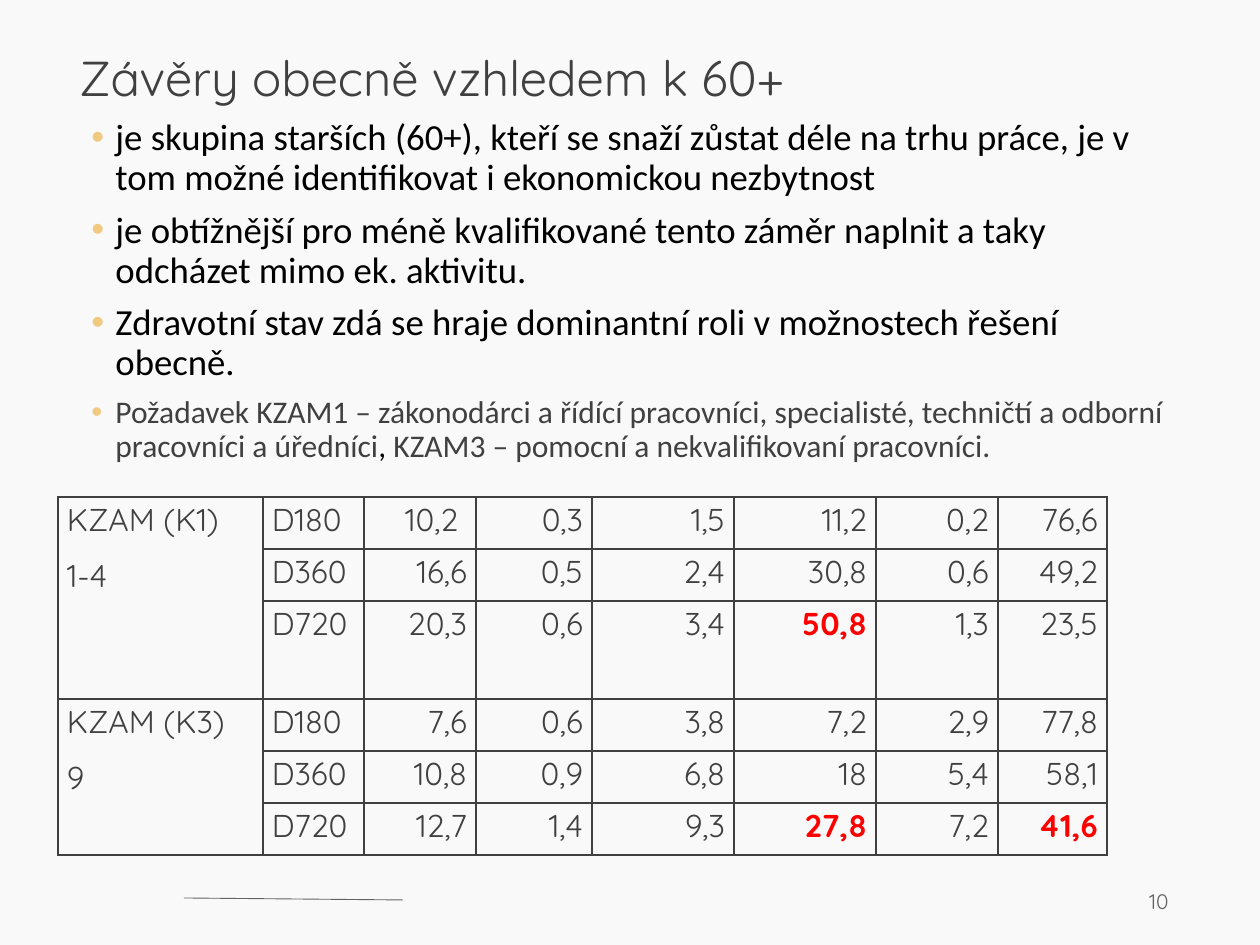
from lxml import etree
from pptx import Presentation
from pptx import util as u
from pptx.dml.color import RGBColor
from pptx.enum import shapes, text
from pptx.oxml.ns import qn

COLORS = {"background": "F9F9F9", "text": "404040", "body": "000000",
          "bullet": "F0CA81", "muted": "636363", "highlight": "FF0000"}
ALIGN = text.PP_ALIGN


def px(pixels):
    return u.Emu(round(pixels * 914400 / 126))


def add_run(paragraph, words, size, color, font="Quicksand", bold=False):
    run = paragraph.add_run()
    run.text = words
    run.font.name = font
    run.font.size = u.Pt(size)
    run.font.bold = bold
    run.font.color.rgb = RGBColor.from_string(COLORS[color])


presentation = Presentation()
presentation.slide_width, presentation.slide_height = px(1260), px(945)
slide = presentation.slides.add_slide(presentation.slide_layouts[5])
slide.background.fill.solid()
slide.background.fill.fore_color.rgb = RGBColor.from_string(COLORS["background"])

# Footer line
line = slide.shapes.add_connector(shapes.MSO_CONNECTOR.STRAIGHT,
                                  px(184), px(898), px(403), px(900))
line.line.color.rgb = RGBColor.from_string(COLORS["muted"])
line.line.width = u.Pt(0.5)
etree.SubElement(line._element.spPr, qn("a:effectLst"))

# Slide number
number = slide.shapes.add_textbox(px(897), px(876), px(284), px(50)).text_frame
number.word_wrap = True
number.vertical_anchor = text.MSO_ANCHOR.MIDDLE
number.paragraphs[0].alignment = ALIGN.RIGHT
add_run(number.paragraphs[0], "10", 12, "muted")

# Title
title = slide.shapes.title
title.left, title.top, title.width, title.height = px(79), px(59), px(1101), px(50)
frame = title.text_frame
frame.auto_size = text.MSO_AUTO_SIZE.NONE
frame.word_wrap = True
frame.vertical_anchor = text.MSO_ANCHOR.TOP
frame.margin_left = frame.margin_right = frame.margin_top = frame.margin_bottom = 0
frame.paragraphs[0].alignment = ALIGN.LEFT
frame.paragraphs[0].line_spacing = 0.8
add_run(frame.paragraphs[0], "Závěry obecně vzhledem k 60+", 28, "text")

# Bulleted conclusions: each is a size and its runs
conclusions = [
    (21, [("je skupina starších (60+), kteří se snaží zůstat déle na trhu práce, "
           "je v tom možné identifikovat i ekonomickou nezbytnost", "body")]),
    (21, [("je obtížnější pro méně kvalifikované tento záměr naplnit a "
           "taky odcházet mimo ek. aktivitu.", "body")]),
    (21, [("Zdravotní stav zdá se hraje dominantní roli v možnostech řešení obecně.",
           "body")]),
    (18, [("Požadavek KZAM1 – zákonodárci a řídící pracovníci, specialisté, "
           "techničtí a odborní pracovníci a úředníci", "text"),
          (", ", "body"),
          ("KZAM3 – pomocní a nekvalifikovaní pracovníci.", "text")]),
]
body = slide.shapes.add_textbox(px(79), px(113), px(1101), px(670)).text_frame
body.word_wrap = True
for index, (size, runs) in enumerate(conclusions):
    paragraph = body.add_paragraph() if index else body.paragraphs[0]
    properties = paragraph._p.get_or_add_pPr()
    properties.set("marL", str(px(24)))
    properties.set("indent", str(-px(24)))
    bullet_color = etree.SubElement(properties, qn("a:buClr"))
    etree.SubElement(bullet_color, qn("a:srgbClr"), val=COLORS["bullet"])
    etree.SubElement(properties, qn("a:buFont"), typeface="Arial")
    etree.SubElement(properties, qn("a:buChar"), char="•")
    paragraph.line_spacing = 0.9
    if index:
        paragraph.space_before = u.Pt(7.5)
    for words, color in runs:
        add_run(paragraph, words, size, color, "Calibri")

# Table: two groups of three durations
column_widths = [205, 101, 112, 116, 142, 142, 122, 109]
row_heights = [52, 52, 98, 52, 52, 52]
rows = [
    ["KZAM (K1)\n1-4", "D180", "10,2 ", "0,3", "1,5", "11,2", "0,2", "76,6"],
    ["", "D360", "16,6", "0,5", "2,4", "30,8", "0,6", "49,2"],
    ["", "D720", "20,3", "0,6", "3,4", "50,8", "1,3", "23,5"],
    ["KZAM (K3)\n9", "D180", "7,6", "0,6", "3,8", "7,2", "2,9", "77,8"],
    ["", "D360", "10,8", "0,9", "6,8", "18", "5,4", "58,1"],
    ["", "D720", "12,7", "1,4", "9,3", "27,8", "7,2", "41,6"],
]
highlights = {(2, 5), (5, 5), (5, 7)}
table = slide.shapes.add_table(len(rows), len(column_widths), px(58), px(497),
                               px(sum(column_widths)), px(sum(row_heights))).table
table.first_row = table.horz_banding = False
for column, width in zip(table.columns, column_widths):
    column.width = px(width)
for row, height in zip(table.rows, row_heights):
    row.height = px(height)
for first in (0, 3):
    table.cell(first, 0).merge(table.cell(first + 2, 0))

for r, values in enumerate(rows):
    for c, value in enumerate(values):
        cell = table.cell(r, c)
        cell.margin_left = cell.margin_right = px(9)
        cell.margin_top = cell.margin_bottom = 0
        # Borders come before the fill in the cell properties
        properties = cell._tc.get_or_add_tcPr()
        for side in ("lnL", "lnR", "lnT", "lnB"):
            border = etree.SubElement(properties, qn(f"a:{side}"), w=str(u.Pt(1)))
            fill = etree.SubElement(border, qn("a:solidFill"))
            etree.SubElement(fill, qn("a:srgbClr"), val=COLORS["text"])
        cell.fill.background()
        if not value:
            continue
        marked = (r, c) in highlights
        for index, words in enumerate(value.split("\n")):
            frame = cell.text_frame
            paragraph = frame.add_paragraph() if index else frame.paragraphs[0]
            paragraph.alignment = ALIGN.RIGHT if c > 1 else ALIGN.JUSTIFY
            paragraph.line_spacing = 1.07
            paragraph.space_after = u.Pt(8)
            add_run(paragraph, words, 18, "highlight" if marked else "text", bold=marked)

presentation.save("out.pptx")
